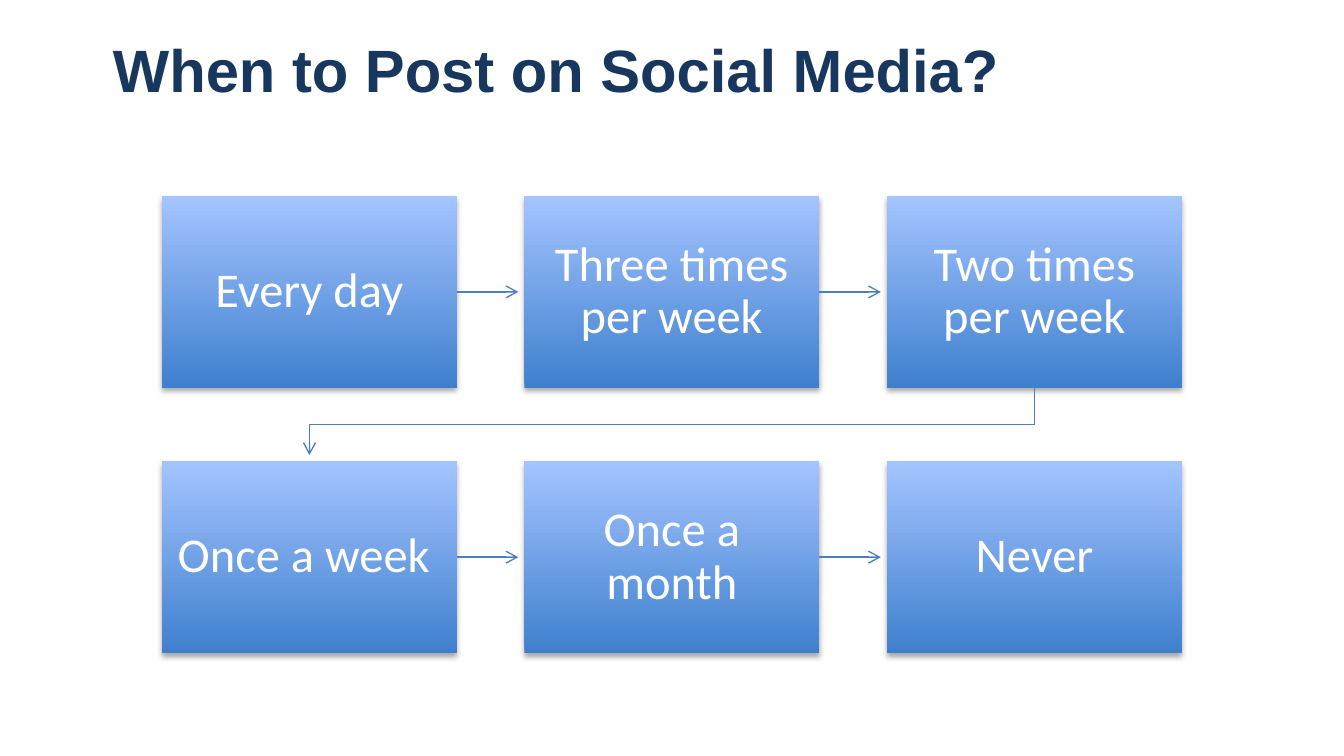
import lxml.etree
import pptx
import pptx.dml.color
import pptx.enum.shapes
import pptx.enum.text
import pptx.oxml.ns
import pptx.util

Pt = pptx.util.Pt
qn = pptx.oxml.ns.qn

COLOURS = {
    "title": "17375E",
    "box_bottom": "3F80CE",
    "box_top": "A4C4FF",
    "box_text": "FFFFFF",
    "arrow": "4B7EBC",
    "shadow": "000000",
}

STEPS = ["Every day", "Three times per week", "Two times per week",
         "Once a week ", "Once a month", "Never"]

# Grid of boxes, in points
COLUMNS = 3
LEFT, TOP = 86.8, 105
BOX_WIDTH, BOX_HEIGHT = 158, 102.8
COLUMN_STEP, ROW_STEP = 194.2, 142.1
ARROW_GAP = 3.3


def rgb(name):
    return pptx.dml.color.RGBColor.from_string(COLOURS[name])


def write_text(shape, text, *, font, size, colour, bold=False,
               align=pptx.enum.text.PP_ALIGN.LEFT, line_spacing=1.0, inset=7.2):
    frame = shape.text_frame
    frame.word_wrap = True
    frame.auto_size = pptx.enum.text.MSO_AUTO_SIZE.NONE
    frame.vertical_anchor = pptx.enum.text.MSO_ANCHOR.MIDDLE
    frame.margin_left = frame.margin_right = Pt(inset)
    frame.margin_top = frame.margin_bottom = Pt(inset)
    paragraph = frame.paragraphs[0]
    paragraph.alignment = align
    paragraph.line_spacing = line_spacing
    run = paragraph.add_run()
    run.text = text
    run.font.name = font
    run.font.size = Pt(size)
    run.font.bold = bold
    run.font.color.rgb = rgb(colour)


def add_title(slide, text):
    title = slide.shapes.title
    title.left, title.top = Pt(53.3), Pt(2.9)
    title.width, title.height = Pt(645.8), Pt(67.7)
    write_text(title, text, font="Arial", size=32, colour="title", bold=True)


def add_soft_shadow(shape):
    shape.shadow.inherit = False
    effects = shape._element.spPr.find(qn("a:effectLst"))
    shadow = lxml.etree.SubElement(
        effects, qn("a:outerShdw"), blurRad=str(Pt(3.1)), dist=str(Pt(1.8)),
        dir="5400000", rotWithShape="0")
    colour = lxml.etree.SubElement(shadow, qn("a:srgbClr"), val=COLOURS["shadow"])
    lxml.etree.SubElement(colour, qn("a:alpha"), val="35000")


def add_box(slide, text, left, top):
    box = slide.shapes.add_shape(
        pptx.enum.shapes.MSO_SHAPE.RECTANGLE,
        Pt(left), Pt(top), Pt(BOX_WIDTH), Pt(BOX_HEIGHT))
    box.fill.gradient()
    box.fill.gradient_angle = 90
    for stop, colour in zip(box.fill.gradient_stops, ("box_bottom", "box_top")):
        stop.color.rgb = rgb(colour)
    box.line.fill.background()
    add_soft_shadow(box)
    write_text(box, text, font="Calibri", size=26, colour="box_text",
               align=pptx.enum.text.PP_ALIGN.CENTER, line_spacing=0.9)


def style_arrow(shape):
    shape.line.color.rgb = rgb("arrow")
    shape.line.width = Pt(0.75)
    properties = shape._element.spPr
    lxml.etree.SubElement(properties.find(qn("a:ln")), qn("a:tailEnd"), type="arrow")
    if properties.find(qn("a:effectLst")) is None:
        lxml.etree.SubElement(properties, qn("a:effectLst"))


def add_straight_arrow(slide, left, top):
    """Arrow from the right side of the box at left, top to its neighbour."""
    middle = Pt(top + BOX_HEIGHT / 2)
    arrow = slide.shapes.add_connector(
        pptx.enum.shapes.MSO_CONNECTOR.STRAIGHT,
        Pt(left + BOX_WIDTH), middle, Pt(left + COLUMN_STEP - ARROW_GAP), middle)
    style_arrow(arrow)


def add_row_arrow(slide, left, top):
    """Bent arrow from the last box of a row to the first box of the next."""
    start_x, end_x = left + BOX_WIDTH / 2, LEFT + BOX_WIDTH / 2
    start_y, end_y = top + BOX_HEIGHT, top + ROW_STEP
    bend_y = (start_y + end_y) / 2
    points = [(start_x, bend_y), (end_x, bend_y), (end_x, end_y - ARROW_GAP)]
    builder = slide.shapes.build_freeform(Pt(start_x), Pt(start_y))
    builder.add_line_segments([(Pt(x), Pt(y)) for x, y in points], close=False)
    arrow = builder.convert_to_shape()
    arrow.fill.background()
    style_arrow(arrow)


def main():
    presentation = pptx.Presentation()
    presentation.slide_width, presentation.slide_height = Pt(720), Pt(405)
    slide = presentation.slides.add_slide(presentation.slide_layouts[5])

    add_title(slide, "When to Post on Social Media?")

    # Boxes in reading order, each with an arrow to the next
    for index, step in enumerate(STEPS):
        row, column = divmod(index, COLUMNS)
        left, top = LEFT + column * COLUMN_STEP, TOP + row * ROW_STEP
        add_box(slide, step, left, top)
        if column < COLUMNS - 1:
            add_straight_arrow(slide, left, top)
        elif index < len(STEPS) - 1:
            add_row_arrow(slide, left, top)

    presentation.save("out.pptx")


if __name__ == "__main__":
    main()
